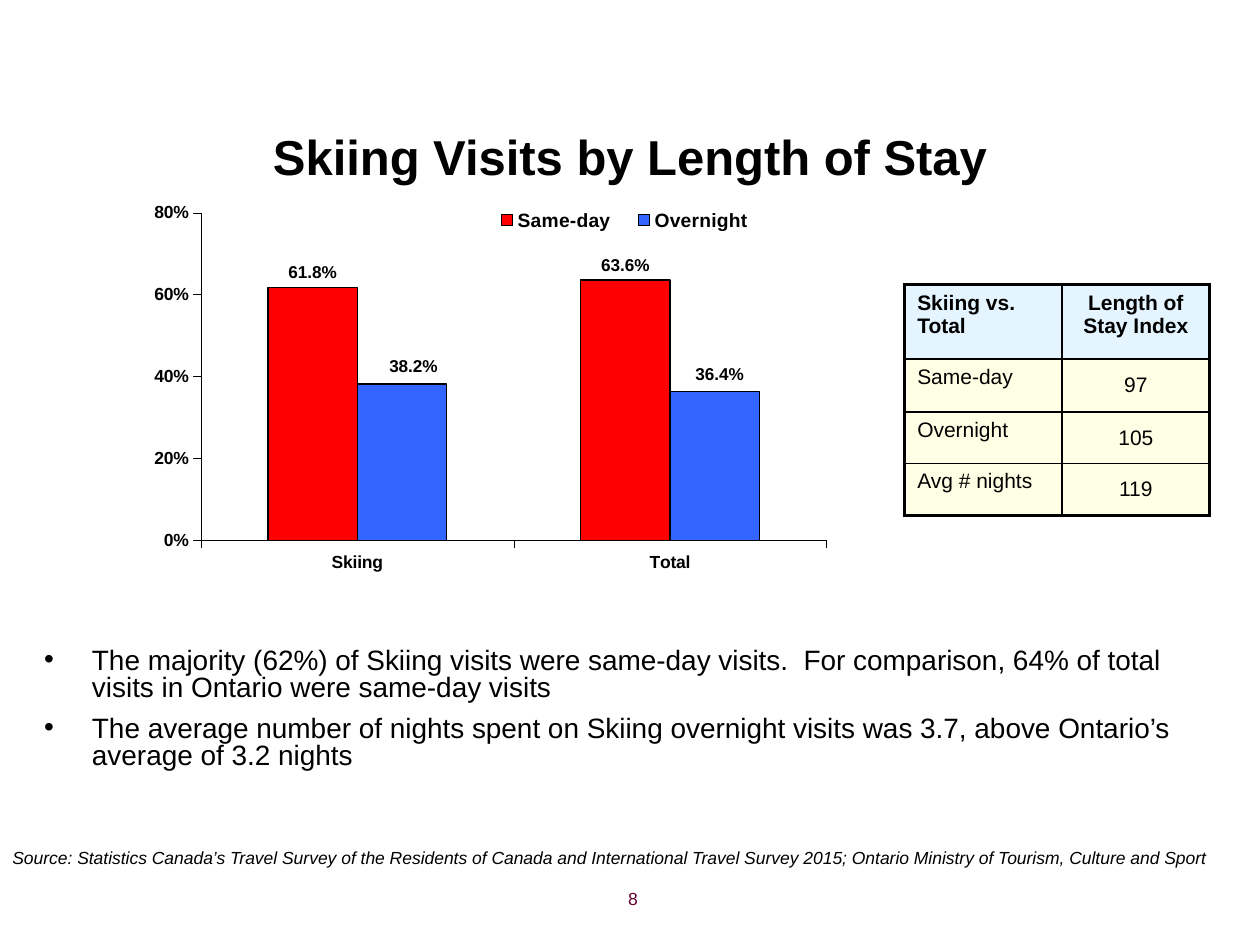
from dataclasses import dataclass

from pptx import Presentation
from pptx.chart.data import CategoryChartData
from pptx.dml.color import RGBColor
from pptx.enum.chart import XL_CHART_TYPE, XL_LABEL_POSITION, XL_LEGEND_POSITION, XL_TICK_MARK
from pptx.enum.text import MSO_ANCHOR, MSO_AUTO_SIZE, PP_ALIGN
from pptx.oxml import parse_xml
from pptx.oxml.ns import nsdecls, qn
from pptx.util import Inches, Pt

LEFT, CENTER, RIGHT = PP_ALIGN.LEFT, PP_ALIGN.CENTER, PP_ALIGN.RIGHT
TOP, MIDDLE = MSO_ANCHOR.TOP, MSO_ANCHOR.MIDDLE
OUTSIDE_END = XL_LABEL_POSITION.OUTSIDE_END
FONT = "Arial"
BLACK = "000000"
THIN, THICK = 1, 2.25


@dataclass
class Series:
    name: str
    values: tuple
    color: str
    label_shifts: tuple = ()


SERIES = [
    Series("Same-day", (0.618, 0.636), "FF0000"),
    Series("Overnight", (0.382, 0.364), "3366FF", (0.012, 0.005)),
]
TABLE_ROWS = [
    ("Skiing vs. Total", "Length of Stay Index"),
    ("Same-day", "97"),
    ("Overnight", "105"),
    ("Avg # nights", "119"),
]
BULLETS = [
    "The majority (62%) of Skiing visits were same-day visits.  "
    "For comparison, 64% of total visits in Ontario were same-day visits",
    "The average number of nights spent on Skiing overnight visits was 3.7, "
    "above Ontario’s average of 3.2 nights",
]
SOURCE = (
    "Source: Statistics Canada’s Travel Survey of the Residents of Canada and "
    "International Travel Survey 2015; Ontario Ministry of Tourism, Culture and Sport"
)


def color(value: str) -> RGBColor:
    return RGBColor.from_string(value)


def format_font(font, size: float, bold=False, italic=False, fill=BLACK) -> None:
    font.name, font.size, font.bold, font.italic = FONT, Pt(size), bold, italic
    font.color.rgb = color(fill)


def write_text(paragraph, text: str, size: float, align=LEFT, **font_format) -> None:
    paragraph.alignment = align
    run = paragraph.add_run()
    run.text = text
    format_font(run.font, size, **font_format)


def place(shape, left: float, top: float, width: float, height: float) -> None:
    shape.left, shape.top = Inches(left), Inches(top)
    shape.width, shape.height = Inches(width), Inches(height)


def add_text(slide, box: tuple, text: str, size: float, **text_format) -> None:
    frame = slide.shapes.add_textbox(*map(Inches, box)).text_frame
    frame.word_wrap = True
    write_text(frame.paragraphs[0], text, size, **text_format)


def add_title(slide) -> None:
    title = slide.shapes.title
    place(title, 0.5, 0.86, 9, 0.75)
    title.text_frame.auto_size = MSO_AUTO_SIZE.NONE
    title.text_frame.vertical_anchor = MIDDLE
    write_text(title.text_frame.paragraphs[0], "Skiing Visits by Length of Stay",
               28, align=CENTER, bold=True)


def add_bullets(slide) -> None:
    body = slide.placeholders[1]
    place(body, 0.25, 5.1, 9.5, 1.67)
    frame = body.text_frame
    frame.auto_size = MSO_AUTO_SIZE.NONE
    frame.vertical_anchor = TOP
    for index, text in enumerate(BULLETS):
        paragraph = frame.add_paragraph() if index else frame.paragraphs[0]
        properties = paragraph._p.get_or_add_pPr()
        properties.set("marL", str(Inches(0.38)))
        properties.set("indent", str(-Inches(0.38)))
        properties.append(parse_xml(f'<a:buChar {nsdecls("a")} char="•"/>'))
        paragraph.line_spacing = 0.8
        paragraph.space_before = Pt(8 if index else 0)
        write_text(paragraph, text, 16)


def style_cell(cell, fill: str, borders: dict) -> None:
    """Fill the cell half transparent and draw its borders, given in points."""
    cell.fill.solid()
    cell.fill.fore_color.rgb = color(fill)
    properties = cell._tc.get_or_add_tcPr()
    fill_color = properties.find(".//" + qn("a:srgbClr"))
    fill_color.append(parse_xml(f'<a:alpha {nsdecls("a")} val="50000"/>'))
    for position, (side, width) in enumerate(borders.items()):
        properties.insert(position, parse_xml(
            f'<a:ln{side} {nsdecls("a")} w="{Pt(width)}"><a:solidFill>'
            f'<a:srgbClr val="{BLACK}"/></a:solidFill></a:ln{side}>'))


def add_index_table(slide) -> None:
    frame = slide.shapes.add_table(len(TABLE_ROWS), 2, *map(Inches, (7.18, 2.26, 2.42, 1.83)))
    table = frame.table
    table.first_row = table.horz_banding = False
    for column, width in zip(table.columns, (1.25, 1.17)):
        column.width = Inches(width)
    for row, height in zip(table.rows, (0.59, 0.42, 0.41, 0.41)):
        row.height = Inches(height)
    last_row = len(TABLE_ROWS) - 1
    for row, texts in enumerate(TABLE_ROWS):
        for column, text in enumerate(texts):
            cell = table.cell(row, column)
            outer = {"L": column == 0, "R": column == 1, "T": row == 0, "B": row == last_row}
            style_cell(cell, "FFFFCC" if row else "CCECFF",
                       {side: THICK if edge else THIN for side, edge in outer.items()})
            if row and column:
                cell.vertical_anchor = MIDDLE
                cell.margin_left = cell.margin_right = cell.margin_top = cell.margin_bottom = 0
            write_text(cell.text_frame.paragraphs[0], text, 12,
                       align=CENTER if column else LEFT, bold=row == 0)


def set_layout(parent, position: int, target="", **fractions: float) -> None:
    """Give a chart part a manual layout in fractions of the chart."""
    for old in parent.findall(qn("c:layout")):
        parent.remove(old)
    modes = '<c:xMode val="edge"/><c:yMode val="edge"/>' if "w" in fractions else ""
    values = "".join(f'<c:{key} val="{value}"/>' for key, value in fractions.items())
    parent.insert(position, parse_xml(
        f'<c:layout {nsdecls("c")}><c:manualLayout>{target}{modes}{values}'
        "</c:manualLayout></c:layout>"))


def style_series(series, design: Series) -> None:
    series.format.fill.solid()
    series.format.fill.fore_color.rgb = color(design.color)
    series.format.line.color.rgb = color(BLACK)
    series.format.line.width = Pt(0.75)
    series.invert_if_negative = False
    labels = series.data_labels
    labels.show_value = True
    labels.number_format, labels.number_format_is_linked = "0.0%", False
    labels.position = OUTSIDE_END
    format_font(labels.font, 9.8, bold=True)
    for index, shift in enumerate(design.label_shifts):
        label = series.points[index].data_label
        label.position = OUTSIDE_END
        format_font(label.font, 9.8, bold=True)
        set_layout(labels._element.findall(qn("c:dLbl"))[index], 1, x=shift, y=-0.005)


def add_visits_chart(slide) -> None:
    data = CategoryChartData(number_format="0.0%")
    data.categories = ["Skiing", "Total"]
    for design in SERIES:
        data.add_series(design.name, design.values)
    chart = slide.shapes.add_chart(XL_CHART_TYPE.COLUMN_CLUSTERED,
                                   *map(Inches, (0.83, 1.5, 7.64, 3.77)), data).chart
    chart.has_title = False
    format_font(chart.font, 15.7, bold=True)
    plot = chart.plots[0]
    plot.gap_width, plot.overlap, plot.vary_by_categories = 150, 0, False
    for series, design in zip(plot.series, SERIES):
        style_series(series, design)

    for axis in (chart.category_axis, chart.value_axis):
        axis.has_major_gridlines = False
        axis.major_tick_mark = XL_TICK_MARK.OUTSIDE
        axis.minor_tick_mark = XL_TICK_MARK.NONE
        axis.format.line.color.rgb = color(BLACK)
        axis.format.line.width = Pt(0.19)
        format_font(axis.tick_labels.font, 10, bold=True)
    value_axis = chart.value_axis
    value_axis.minimum_scale, value_axis.maximum_scale, value_axis.major_unit = 0, 0.8, 0.2
    value_axis.tick_labels.number_format = "0%"
    value_axis.tick_labels.number_format_is_linked = False

    chart.has_legend = True
    legend = chart.legend
    legend.position = XL_LEGEND_POSITION.RIGHT
    legend.include_in_layout = False
    format_font(legend.font, 11, bold=True)
    set_layout(chart.element.find(".//" + qn("c:legend")), 1, x=0.39, y=0.03, w=0.3, h=0.07)
    set_layout(chart.element.find(".//" + qn("c:plotArea")), 0,
               target='<c:layoutTarget val="inner"/>', x=0.1, y=0.05, w=0.65, h=0.69)


def main() -> None:
    presentation = Presentation()
    presentation.slide_width, presentation.slide_height = Inches(10), Inches(7.5)
    slide = presentation.slides.add_slide(presentation.slide_layouts[1])
    add_title(slide)
    add_index_table(slide)
    add_bullets(slide)
    add_text(slide, (2.83, 7, 2.33, 0.35), "8", 10, align=RIGHT, fill="660033")
    add_visits_chart(slide)
    add_text(slide, (0, 6.67, 9.8, 0.27), SOURCE, 10, italic=True)
    presentation.save("out.pptx")


if __name__ == "__main__":
    main()
